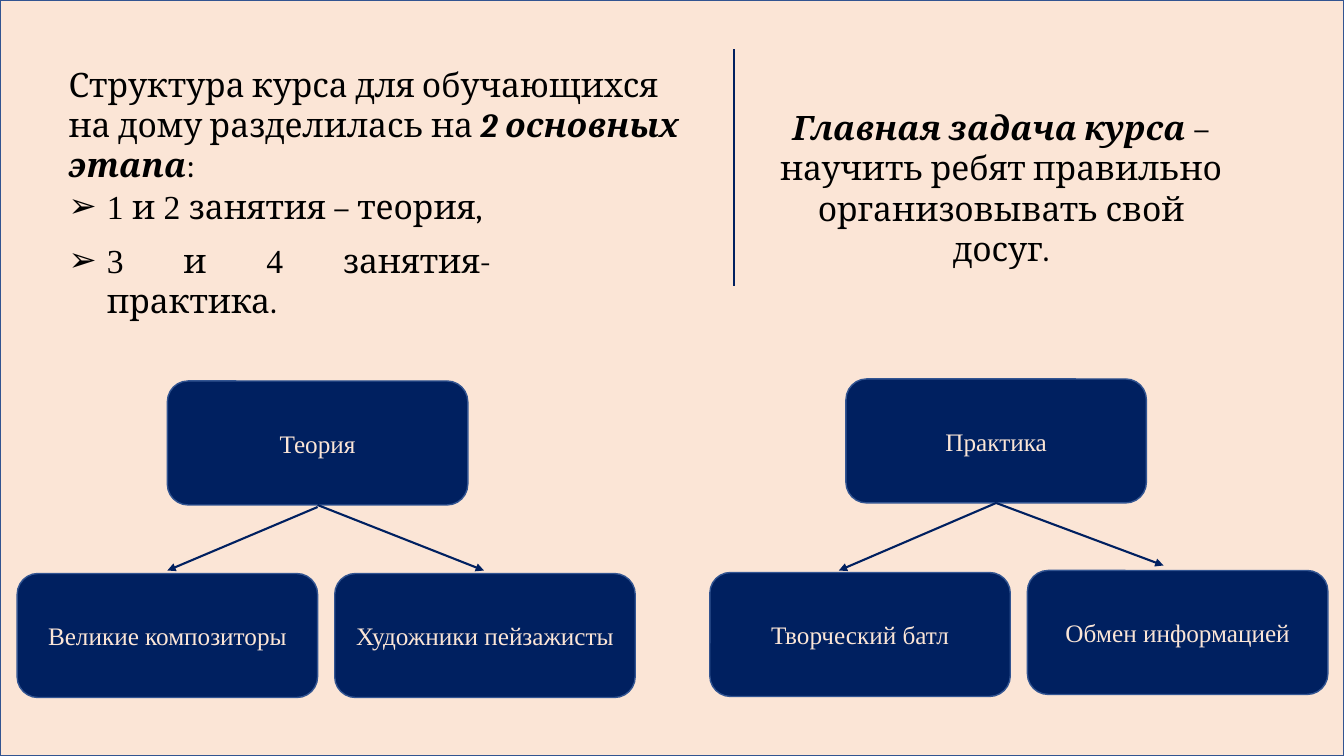
from dataclasses import dataclass

from lxml.etree import SubElement
from pptx import Presentation
from pptx.dml.color import RGBColor
from pptx.enum.shapes import MSO_CONNECTOR, MSO_SHAPE
from pptx.enum.text import MSO_ANCHOR, MSO_AUTO_SIZE, PP_ALIGN
from pptx.oxml.ns import qn
from pptx.util import Inches, Pt

NAVY, PEACH, BORDER, BLACK = "002060", "FBE5D6", "325491", "000000"
SERIF, ROMAN = "Cambria", "Times New Roman"
BOX_WIDTH, BOX_HEIGHT = 2.98, 1.23


@dataclass
class Span:
    text: str
    font: str = SERIF
    strong: bool = False


@dataclass
class Stage:
    text: str
    left: float
    top: float


@dataclass
class Arrow:
    start: tuple[float, float]
    end: tuple[float, float]


def color(value: str) -> RGBColor:
    return RGBColor.from_string(value)


def add_span(para, span: Span, size: int, ink: str) -> None:
    run = para.add_run()
    run.text = span.text
    run.font.name = span.font
    run.font.size = Pt(size)
    run.font.bold = run.font.italic = span.strong
    run.font.color.rgb = color(ink)


def fill_placeholder(holder, place: tuple, paragraphs: list[list[Span]],
                     align: PP_ALIGN, bullet: str = "") -> None:
    holder.left, holder.top, holder.width, holder.height = map(Inches, place)
    frame = holder.text_frame
    frame.word_wrap = True
    frame.auto_size = MSO_AUTO_SIZE.NONE
    frame.vertical_anchor = MSO_ANCHOR.TOP
    for index, spans in enumerate(paragraphs):
        para = frame.add_paragraph() if index else frame.paragraphs[0]
        para.alignment = align
        para.line_spacing = Pt(28.8)
        para.space_before, para.space_after = Pt(0), Pt(10)
        indent = Inches(0.38) if bullet else 0
        properties = para._p.get_or_add_pPr()
        properties.set("marL", str(indent))
        properties.set("indent", str(-indent))
        if bullet:
            SubElement(properties, qn("a:buChar")).set("char", bullet)
        else:
            SubElement(properties, qn("a:buNone"))
        for span in spans:
            add_span(para, span, 24, BLACK)


def add_panel(page, kind: MSO_SHAPE, place: tuple, fill: str):
    panel = page.shapes.add_shape(kind, *map(Inches, place))
    panel.shadow.inherit = False
    panel.fill.solid()
    panel.fill.fore_color.rgb = color(fill)
    panel.line.color.rgb = color(BORDER)
    panel.line.width = Pt(1)
    return panel


def add_stage(page, stage: Stage) -> None:
    place = (stage.left, stage.top, BOX_WIDTH, BOX_HEIGHT)
    box = add_panel(page, MSO_SHAPE.ROUNDED_RECTANGLE, place, NAVY)
    frame = box.text_frame
    frame.word_wrap = False
    frame.vertical_anchor = MSO_ANCHOR.MIDDLE
    para = frame.paragraphs[0]
    para.alignment = PP_ALIGN.CENTER
    add_span(para, Span(stage.text, ROMAN), 18, PEACH)


def add_line(page, line: Arrow, pointed: bool = True) -> None:
    connector = page.shapes.add_connector(
        MSO_CONNECTOR.STRAIGHT, *map(Inches, line.start + line.end))
    connector.line.color.rgb = color(NAVY)
    connector.line.width = Pt(1.5)
    if pointed:
        SubElement(connector.line._get_or_add_ln(), qn("a:tailEnd")).set("type", "triangle")
    SubElement(connector.element.spPr, qn("a:effectLst"))


STAGES = [
    Stage("Теория", 1.66, 3.78),
    Stage("Великие композиторы", 0.17, 5.69),
    Stage("Художники пейзажисты", 3.32, 5.69),
    Stage("Практика", 8.39, 3.76),
    Stage("Творческий батл", 7.04, 5.68),
    Stage("Обмен информацией", 10.19, 5.66),
]
ARROWS = [
    Arrow((3.15, 5.01), (4.8, 5.66)),
    Arrow((3.15, 5.03), (1.66, 5.66)),
    Arrow((9.88, 4.99), (8.32, 5.66)),
    Arrow((9.88, 4.99), (11.54, 5.61)),
]
INTRO = [[
    Span("Структура курса для обучающихся на дому разделилась на "),
    Span("2 основных этапа", strong=True),
    Span(":"),
]]
LESSONS = [
    [Span(f"{first} ", ROMAN), Span("и"), Span(f" {second} ", ROMAN), Span(ending)]
    for first, second, ending in [(1, 2, "занятия – теория, "),
                                  (3, 4, "занятия- практика. ")]
]
GOAL = [[
    Span("Главная задача курса ", strong=True),
    Span("– научить ребят правильно организовывать свой досуг."),
]]


def main() -> None:
    deck = Presentation()
    deck.slide_width, deck.slide_height = Inches(13.33), Inches(7.5)
    page = deck.slides.add_slide(deck.slide_layouts[3])

    # Backdrop, placed behind the placeholders
    backdrop = add_panel(page, MSO_SHAPE.RECTANGLE, (0, 0, 13.33, 7.5), PEACH)
    backdrop.element.getparent().insert(2, backdrop.element)

    # Course structure and goal
    title, lessons, goal = page.placeholders
    fill_placeholder(title, (0.58, 0.58, 6.46, 0.91), INTRO, PP_ALIGN.LEFT)
    fill_placeholder(lessons, (0.58, 1.79, 4.39, 1.05), LESSONS, PP_ALIGN.JUSTIFY, "➢")
    fill_placeholder(goal, (7.54, 1.01, 4.78, 1.31), GOAL, PP_ALIGN.CENTER)
    add_line(page, Arrow((7.28, 0.49), (7.28, 2.84)), pointed=False)

    # Theory and practice trees
    for stage in STAGES:
        add_stage(page, stage)
    for arrow in ARROWS:
        add_line(page, arrow)

    deck.save("out.pptx")


if __name__ == "__main__":
    main()
